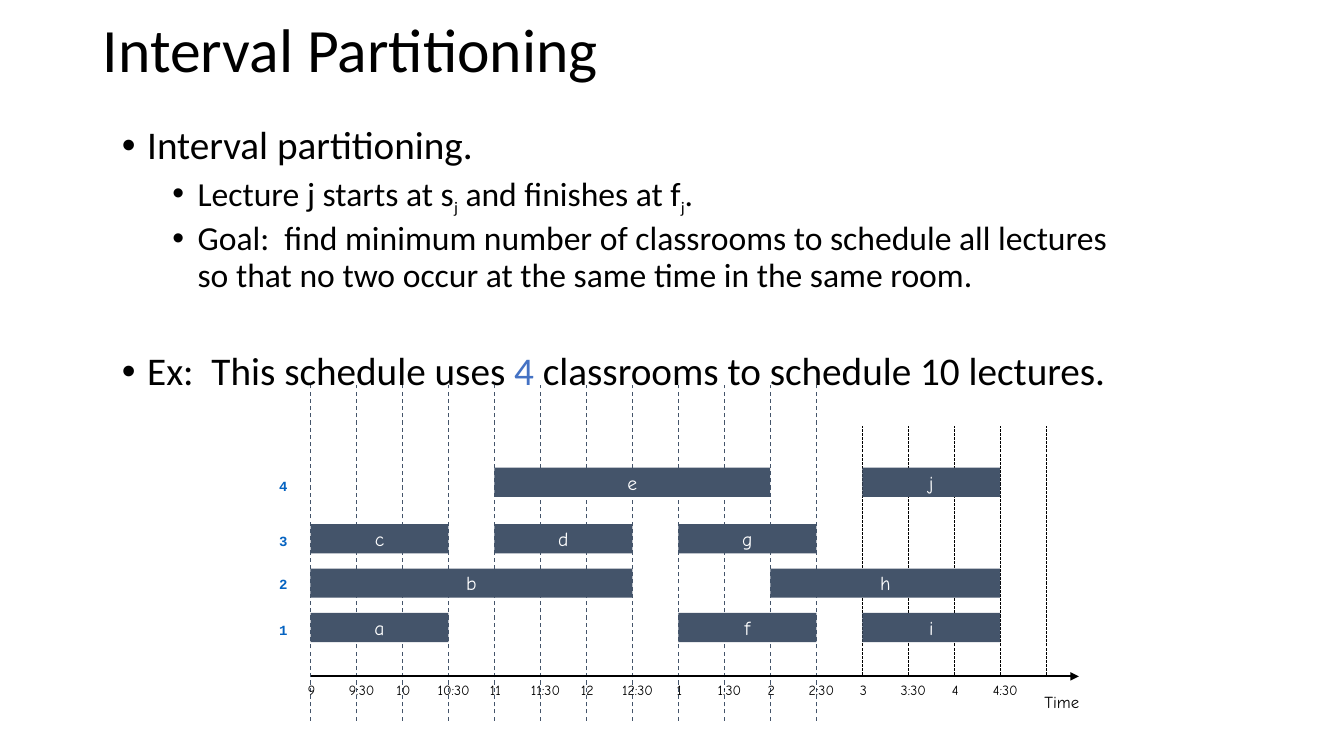
from lxml import etree
from pptx import Presentation
from pptx.dml.color import RGBColor
from pptx.enum.dml import MSO_LINE
from pptx.enum.shapes import MSO_CONNECTOR, MSO_SHAPE
from pptx.enum.text import MSO_ANCHOR, MSO_AUTO_SIZE, PP_ALIGN
from pptx.oxml.ns import qn
from pptx.util import Inches, Pt

LEFT, CENTER = PP_ALIGN.LEFT, PP_ALIGN.CENTER
TOP, MIDDLE = MSO_ANCHOR.TOP, MSO_ANCHOR.MIDDLE
DASH, DOT = MSO_LINE.DASH, MSO_LINE.SQUARE_DOT
STRAIGHT, RECTANGLE = MSO_CONNECTOR.STRAIGHT, MSO_SHAPE.RECTANGLE
NO_AUTOFIT = MSO_AUTO_SIZE.NONE

COLORS = {"text": "000000", "slate": "44546A", "white": "FFFFFF",
          "accent": "4472C4", "room": "0563C1"}
BODY_FONT, CHART_FONT, ROOM_FONT = "Calibri", "Comic Neue", "Courier New"

# Time axis: one tick per half hour from 9:00
AXIS_LEFT, AXIS_TOP, TICK_STEP = 3.08, 6.71, 0.456
TIMES = ["9", "9:30", "10", "10:30", "11", "11:30", "12", "12:30",
         "1", "1:30", "2", "2:30", "3", "3:30", "4", "4:30"]
DASHED_TICKS, TICK_COUNT = 12, 17

# Classroom: (top of its bars, top of its label)
BAR_HEIGHT = 0.29
ROOMS = {1: (6.08, 6.12), 2: (5.64, 5.66), 3: (5.2, 5.23), 4: (4.64, 4.69)}

# Lecture, classroom, start tick, finish tick
LECTURES = [("a", 1, 0, 3), ("b", 2, 0, 7), ("c", 3, 0, 3), ("d", 3, 4, 7),
            ("e", 4, 4, 10), ("f", 1, 8, 11), ("g", 3, 8, 11),
            ("h", 2, 10, 15), ("i", 1, 12, 15), ("j", 4, 12, 15)]

# Level, space before, runs of (text, size, color, baseline)
BODY = [
    (0, 10, [("Interval partitioning.", 28, "text", 0)]),
    (1, 5, [("Lecture j starts at s", 24, "text", 0), ("j", 20, "text", -25),
            (" and finishes at f", 24, "text", 0), ("j", 20, "text", -25),
            (".", 24, "text", 0)]),
    (1, 5, [("Goal:  find minimum number of classrooms to schedule all lectures\v"
             "so that no two occur at the same time in the same room.",
             24, "text", 0)]),
    (0, 41, [("Ex:  This schedule uses ", 28, "text", 0), ("4", 28, "accent", 0),
             (" classrooms to schedule 10 lectures.", 28, "text", 0)]),
]


def tick_x(tick):
    return AXIS_LEFT + tick * TICK_STEP


def apply(target, values):
    for name, value in values.items():
        setattr(target, name, value)


class SlideBuilder:
    def __init__(self, presentation):
        layout = presentation.slide_layouts[1]
        self.slide = presentation.slides.add_slide(layout)
        self.title_shape, self.body_shape = self.slide.placeholders

    def place(self, shape, left, top, width, height):
        apply(shape, {"left": Inches(left), "top": Inches(top),
                      "width": Inches(width), "height": Inches(height)})

    def style_frame(self, shape, anchor, wrap):
        apply(shape.text_frame, {"auto_size": NO_AUTOFIT, "word_wrap": wrap,
                                 "vertical_anchor": anchor})

    def add_runs(self, paragraph, runs, font_name, bold=False):
        for text, size, color, baseline in runs:
            for index, line in enumerate(text.split("\v")):
                if index:
                    paragraph.add_line_break()
                run = paragraph.add_run()
                run.text = line
                apply(run.font, {"name": font_name, "size": Pt(size), "bold": bold})
                run.font.color.rgb = RGBColor.from_string(COLORS[color])
                if baseline:
                    run.font._element.set("baseline", str(baseline * 1000))

    def title(self, text, box):
        self.place(self.title_shape, *box)
        self.style_frame(self.title_shape, MIDDLE, True)
        paragraph = self.title_shape.text_frame.paragraphs[0]
        apply(paragraph, {"alignment": LEFT, "line_spacing": 0.9})
        self.add_runs(paragraph, [(text, 44, "text", 0)], BODY_FONT)

    def bullets(self, items, box):
        self.place(self.body_shape, *box)
        self.style_frame(self.body_shape, TOP, True)
        frame = self.body_shape.text_frame
        for index, (level, space, runs) in enumerate(items):
            paragraph = frame.add_paragraph() if index else frame.paragraphs[0]
            apply(paragraph, {"level": level, "line_spacing": 0.9,
                              "space_before": Pt(space), "space_after": Pt(0)})
            properties = paragraph._p.get_or_add_pPr()
            properties.set("marL", str(Inches(0.25 + 0.5 * level)))
            properties.set("indent", str(Inches(-0.25)))
            font = etree.SubElement(properties, qn("a:buFont"))
            font.set("typeface", "Arial")
            etree.SubElement(properties, qn("a:buChar")).set("char", "•")
            self.add_runs(paragraph, runs, BODY_FONT)

    def line(self, start, end, color, width, dash=None, arrow=False):
        connector = self.slide.shapes.add_connector(
            STRAIGHT, *(Inches(value) for value in start + end))
        connector.line.color.rgb = RGBColor.from_string(COLORS[color])
        apply(connector.line, {"width": Pt(width), "dash_style": dash})
        if arrow:
            tail = etree.SubElement(connector.line._get_or_add_ln(), qn("a:tailEnd"))
            tail.set("type", "triangle")
        etree.SubElement(connector._element.spPr, qn("a:effectLst"))

    def label(self, text, box, size, color="text", font=CHART_FONT,
              alignment=LEFT, bold=False):
        shape = self.slide.shapes.add_textbox(*(Inches(value) for value in box))
        self.style_frame(shape, TOP, False)
        paragraph = shape.text_frame.paragraphs[0]
        paragraph.alignment = alignment
        self.add_runs(paragraph, [(text, size, color, 0)], font, bold)

    def bar(self, text, box):
        shape = self.slide.shapes.add_shape(
            RECTANGLE, *(Inches(value) for value in box))
        shape.shadow.inherit = False
        shape.fill.solid()
        shape.fill.fore_color.rgb = RGBColor.from_string(COLORS["slate"])
        shape.line.fill.background()
        self.style_frame(shape, MIDDLE, False)
        paragraph = shape.text_frame.paragraphs[0]
        paragraph.alignment = CENTER
        self.add_runs(paragraph, [(text, 14, "white", 0)], CHART_FONT)


def main():
    presentation = Presentation()
    apply(presentation, {"slide_width": Inches(13.33), "slide_height": Inches(7.5)})
    builder = SlideBuilder(presentation)

    # Title and list
    builder.title("Interval Partitioning", (0.92, 0.11, 11.5, 0.83))
    builder.bullets(BODY, (1.11, 1.2, 10.32, 5.92))

    # Half-hour grid lines
    for tick in range(TICK_COUNT):
        x = tick_x(tick)
        if tick < DASHED_TICKS:
            builder.line((x, 7.15), (x, 3.82), "slate", 0.75, DASH)
        else:
            builder.line((x, 6.7), (x, 4.23), "text", 0.75, DOT)

    # Time axis with its labels
    builder.line((AXIS_LEFT, AXIS_TOP), (10.7, AXIS_TOP), "text", 1.25, arrow=True)
    builder.label("Time", (10.26, 6.81, 0.72, 0.3), 12)
    for tick, time in enumerate(TIMES):
        width = 0.21 + 0.073 * len(time)
        center = tick_x(tick) + (0.05 if ":" in time else 0.01)
        builder.label(time, (center - width / 2, AXIS_TOP, width, 0.27), 10,
                      alignment=CENTER)

    # Lectures
    for name, room, start, finish in LECTURES:
        builder.bar(name, (tick_x(start), ROOMS[room][0],
                           (finish - start) * TICK_STEP, BAR_HEIGHT))

    # Classroom numbers
    for room, (_, label_top) in ROOMS.items():
        builder.label(str(room), (2.67, label_top, 0.29, 0.27), 10, "room",
                      ROOM_FONT, bold=True)

    presentation.save("out.pptx")


if __name__ == "__main__":
    main()
